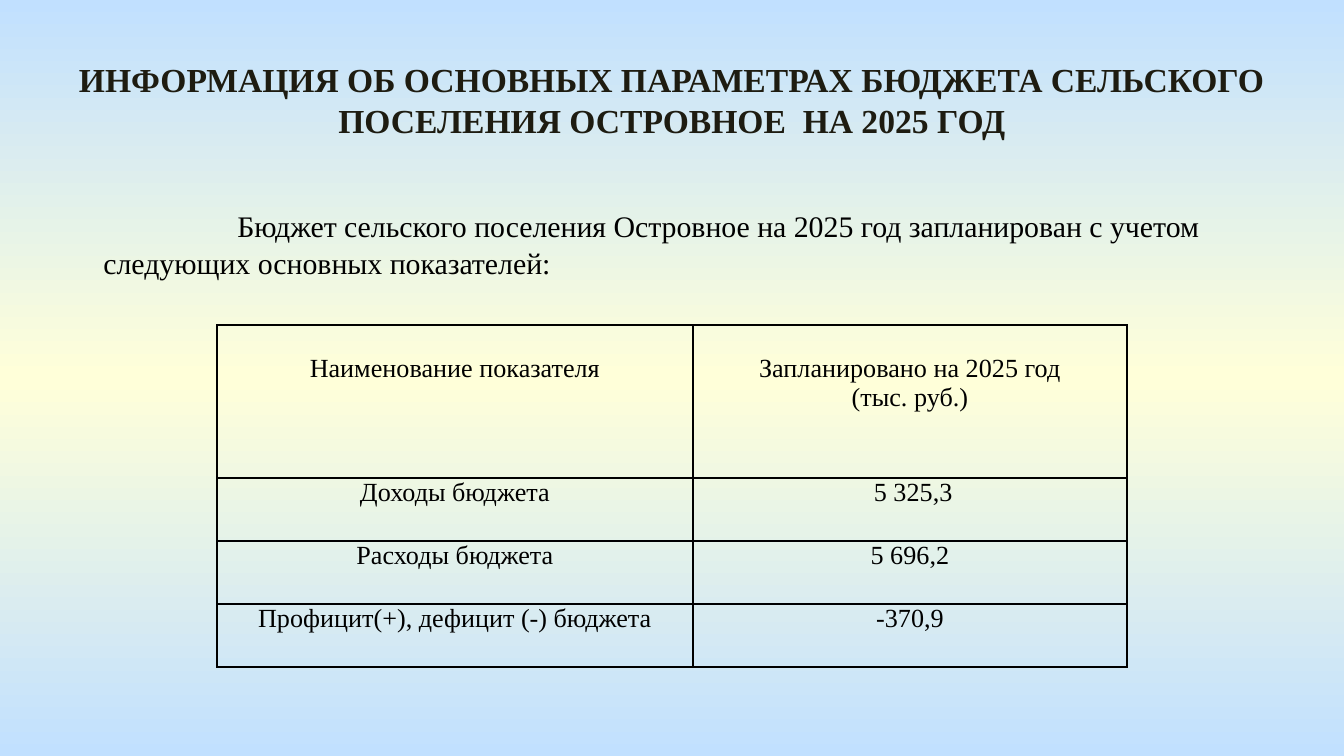
from copy import deepcopy
from dataclasses import dataclass

from lxml import etree
from pptx import Presentation
from pptx.dml.color import RGBColor
from pptx.enum.text import MSO_ANCHOR, MSO_AUTO_SIZE, PP_ALIGN
from pptx.oxml.ns import qn
from pptx.util import Emu, Pt

CENTER, LEFT = PP_ALIGN.CENTER, PP_ALIGN.LEFT
TOP, MIDDLE = MSO_ANCHOR.TOP, MSO_ANCHOR.MIDDLE
NO_AUTOFIT = MSO_AUTO_SIZE.NONE
EMU_PER_PX = 914400 / 134.4


@dataclass(frozen=True)
class Theme:
    font: str = "Times New Roman"
    sky: str = "C1E0FF"
    cream: str = "FFFFD9"
    heading: str = "1E1C11"
    ink: str = "000000"
    title_size: int = 18
    body_size: int = 16
    table_size: int = 14
    border: int = 1


@dataclass(frozen=True)
class Box:
    left: int
    top: int
    width: int
    height: int


@dataclass(frozen=True)
class Row:
    name: str
    value: str
    height: int = 63
    top_margin: int = 0


THEME = Theme()
TITLE_BOX = Box(47, 52, 1250, 95)
INTRO_BOX = Box(90, 196, 1175, 90)
TABLE_BOX = Box(217, 325, 910, 342)
COLUMNS = (476, 434)
FIRST_LINE_INDENT = 134

TITLE = "ИНФОРМАЦИЯ ОБ ОСНОВНЫХ ПАРАМЕТРАХ БЮДЖЕТА СЕЛЬСКОГО ПОСЕЛЕНИЯ ОСТРОВНОЕ  НА 2025 ГОД"
INTRO = ("Бюджет сельского поселения Островное на 2025 год запланирован "
         "с учетом следующих основных показателей:")
ROWS = (
    Row("Наименование показателя", "Запланировано на 2025 год\n(тыс. руб.)", 153, 29),
    Row("Доходы бюджета", " 5 325,3"),
    Row("Расходы бюджета", "5 696,2"),
    Row("Профицит(+), дефицит (-) бюджета", "-370,9"),
)


def px(length: int) -> Emu:
    return Emu(round(length * EMU_PER_PX))


def place(shape, box: Box) -> None:
    shape.left, shape.top = px(box.left), px(box.top)
    shape.width, shape.height = px(box.width), px(box.height)


def set_text(frame, text: str, size: int, color: str, align, bold: bool = False) -> None:
    frame.text = text
    for para in frame.paragraphs:
        para.alignment = align
        para.space_before = Pt(0)
        for span in para.runs:
            span.font.name = THEME.font
            span.font.size = Pt(size)
            span.font.bold = bold
            span.font.color.rgb = RGBColor.from_string(color)


def paint_background(page) -> None:
    fill = page.background.fill
    fill.gradient()
    fill.gradient_angle = 270
    stops = page.element.find(".//" + qn("a:gsLst"))
    stops.append(deepcopy(stops[-1]))
    colors = (THEME.sky, THEME.cream, THEME.sky)
    for stop, color, position in zip(fill.gradient_stops, colors, (0, 0.5, 1)):
        stop.color.rgb = RGBColor.from_string(color)
        stop.position = position


def add_title(page) -> None:
    title = page.shapes.title
    place(title, TITLE_BOX)
    frame = title.text_frame
    set_text(frame, TITLE, THEME.title_size, THEME.heading, CENTER, bold=True)
    frame.word_wrap = True
    frame.auto_size = NO_AUTOFIT
    frame.vertical_anchor = MIDDLE


def add_intro(page) -> None:
    body = page.placeholders[1]
    place(body, INTRO_BOX)
    # The box is filled with the slide background
    body.element.set("useBgFill", "1")
    frame = body.text_frame
    set_text(frame, INTRO, THEME.body_size, THEME.ink, LEFT)
    frame.word_wrap = True
    frame.auto_size = NO_AUTOFIT
    frame.vertical_anchor = TOP
    frame.margin_top = px(11)
    para = frame.paragraphs[0]
    para.line_spacing = 1.02
    # First-line indent without a bullet
    properties = para._p.get_or_add_pPr()
    properties.set("marL", "0")
    properties.set("indent", str(px(FIRST_LINE_INDENT)))
    etree.SubElement(properties, qn("a:buNone"))


def add_borders(cell) -> None:
    properties = cell._tc.get_or_add_tcPr()
    for side in ("lnL", "lnR", "lnT", "lnB"):
        line = etree.SubElement(properties, qn("a:" + side), w=str(Pt(THEME.border)))
        fill = etree.SubElement(line, qn("a:solidFill"))
        etree.SubElement(fill, qn("a:srgbClr"), val=THEME.ink)


def fill_cell(cell, text: str, top_margin: int) -> None:
    add_borders(cell)
    cell.fill.background()
    cell.margin_left = cell.margin_right = px(9)
    cell.margin_top, cell.margin_bottom = px(top_margin), 0
    cell.vertical_anchor = TOP
    set_text(cell.text_frame, text, THEME.table_size, THEME.ink, CENTER)


def add_budget_table(page) -> None:
    box = TABLE_BOX
    table = page.shapes.add_table(len(ROWS), len(COLUMNS), px(box.left), px(box.top),
                                  px(box.width), px(box.height)).table
    table.first_row = table.horz_banding = False
    for column, width in zip(table.columns, COLUMNS):
        column.width = px(width)
    for index, row in enumerate(ROWS):
        table.rows[index].height = px(row.height)
        for column, text in enumerate((row.name, row.value)):
            fill_cell(table.cell(index, column), text, row.top_margin)


def main() -> None:
    deck = Presentation()
    deck.slide_width, deck.slide_height = px(1344), px(756)
    page = deck.slides.add_slide(deck.slide_layouts[1])
    paint_background(page)
    add_title(page)
    add_intro(page)
    add_budget_table(page)
    deck.save("out.pptx")


if __name__ == "__main__":
    main()
